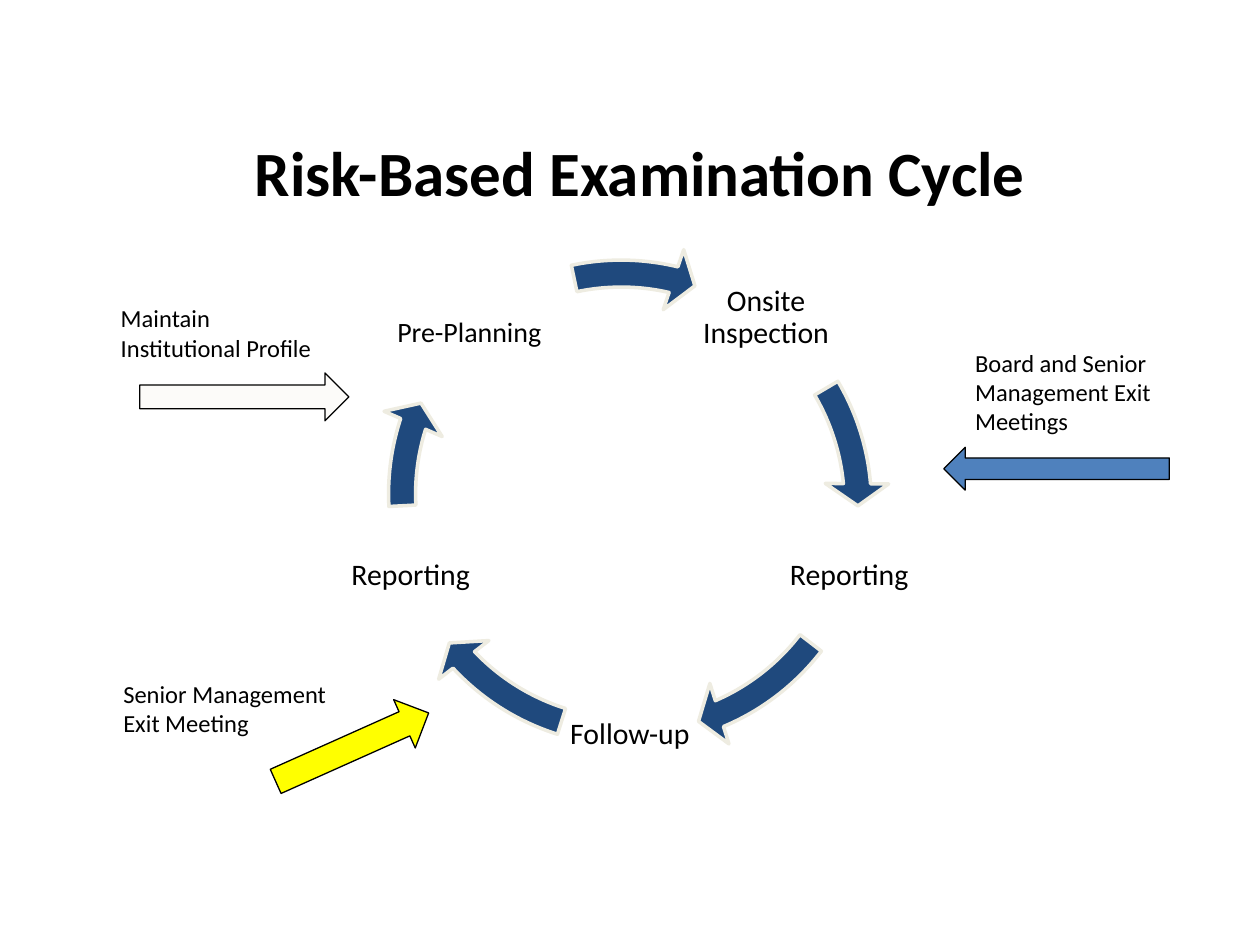
from pptx import Presentation
from pptx.dml.color import RGBColor
from pptx.enum.shapes import MSO_SHAPE
from pptx.enum.text import MSO_ANCHOR, PP_ALIGN
from pptx.util import Inches, Pt

FONT = "Calibri"
RING_SIZE = 4.12
STAGE_SIZE = 1.1
DEGREE = 0.6


def colour(value):
    return RGBColor.from_string(value)


def write(frame, text, size, bold=False, align=PP_ALIGN.LEFT, anchor=MSO_ANCHOR.TOP,
          spacing=1.0, margin=None):
    frame.word_wrap = True
    frame.vertical_anchor = anchor
    if margin is not None:
        frame.margin_left = frame.margin_right = Inches(margin)
        frame.margin_top = frame.margin_bottom = Inches(margin)
    para = frame.paragraphs[0]
    para.alignment = align
    para.line_spacing = spacing
    span = para.add_run()
    span.text = text
    span.font.name = FONT
    span.font.size = Pt(size)
    span.font.bold = bold
    span.font.color.rgb = colour("000000")


def add_text(page, box, text, size, **form):
    label = page.shapes.add_textbox(*map(Inches, box))
    write(label.text_frame, text, size, **form)


def add_arrow(page, kind, box, fill, line="000000", weight=0.75, rotation=0):
    arrow = page.shapes.add_shape(kind, *map(Inches, box))
    arrow.shadow.inherit = False
    arrow.fill.solid()
    arrow.fill.fore_color.rgb = colour(fill)
    arrow.line.color.rgb = colour(line)
    arrow.line.width = Pt(weight)
    arrow.rotation = rotation
    return arrow


def add_title(page, box, text):
    title = page.shapes.title
    title.left, title.top, title.width, title.height = map(Inches, box)
    write(title.text_frame, text, 36, bold=True, align=PP_ALIGN.CENTER, spacing=0.9)


def add_cycle(page, left, top):
    stages = [
        ("Onsite Inspection", 2.59, 0.03, STAGE_SIZE, 17),
        ("Reporting", 3.25, 2.08, STAGE_SIZE, 17),
        ("Follow-up", 1.51, 3.34, STAGE_SIZE, 17),
        ("Reporting", -0.23, 2.08, STAGE_SIZE, 17),
        ("Pre-Planning", -0.05, 0.16, 1.67, 16),
    ]
    sweeps = [
        (329.44, 354.88, 0, 0),
        (37.56, 66.91, 0, 0),
        (107.5, 136.84, 0, 0),
        (177.01, 197.88, 0, -0.08),
        (258.09, 283.27, -0.07, -0.02),
    ]
    for (text, x, y, width, size), (start, end, shift_x, shift_y) in zip(stages, sweeps):
        add_text(page, (left + x, top + y, width, STAGE_SIZE), text, size,
                 align=PP_ALIGN.CENTER, anchor=MSO_ANCHOR.MIDDLE, spacing=0.9, margin=0.02)
        ring = (left + shift_x, top + shift_y, RING_SIZE, RING_SIZE)
        arrow = add_arrow(page, MSO_SHAPE.CIRCULAR_ARROW, ring, "1F497D", "EEECE1", 2)
        values = (0.052, 5.6 * DEGREE, end * DEGREE, start * DEGREE, 0.061)
        for index, value in enumerate(values):
            arrow.adjustments[index] = value


def add_callout(page, left, top, size, text, kind, arrow_box, fill, rotation=0):
    x, y, width, height = arrow_box
    add_arrow(page, kind, (left + x, top + y, width, height), fill, rotation=rotation)
    add_text(page, (left, top, *size), text, 14)


def main():
    deck = Presentation()
    deck.slide_width, deck.slide_height = Inches(10), Inches(7.5)
    page = deck.slides.add_slide(deck.slide_layouts[5])
    add_title(page, (0.42, 1.08, 9.32, 0.71), "Risk-Based Examination Cycle")
    add_cycle(page, 2.94, 1.94)
    add_callout(page, 7.64, 2.71, (2.18, 0.81), "Board and Senior Management Exit Meetings",
                MSO_SHAPE.LEFT_ARROW, (-0.15, 0.84, 1.79, 0.34), "4F81BD")
    add_callout(page, 0.88, 5.34, (2.02, 0.57), "Senior Management Exit Meeting",
                MSO_SHAPE.RIGHT_ARROW, (1.25, 0.38, 1.33, 0.42), "FFFF00", 335.9)
    add_callout(page, 0.86, 2.36, (1.82, 0.57), "Maintain Institutional Profile",
                MSO_SHAPE.RIGHT_ARROW, (0.25, 0.6, 1.66, 0.38), "FCFBF9")
    deck.save("out.pptx")


if __name__ == "__main__":
    main()
